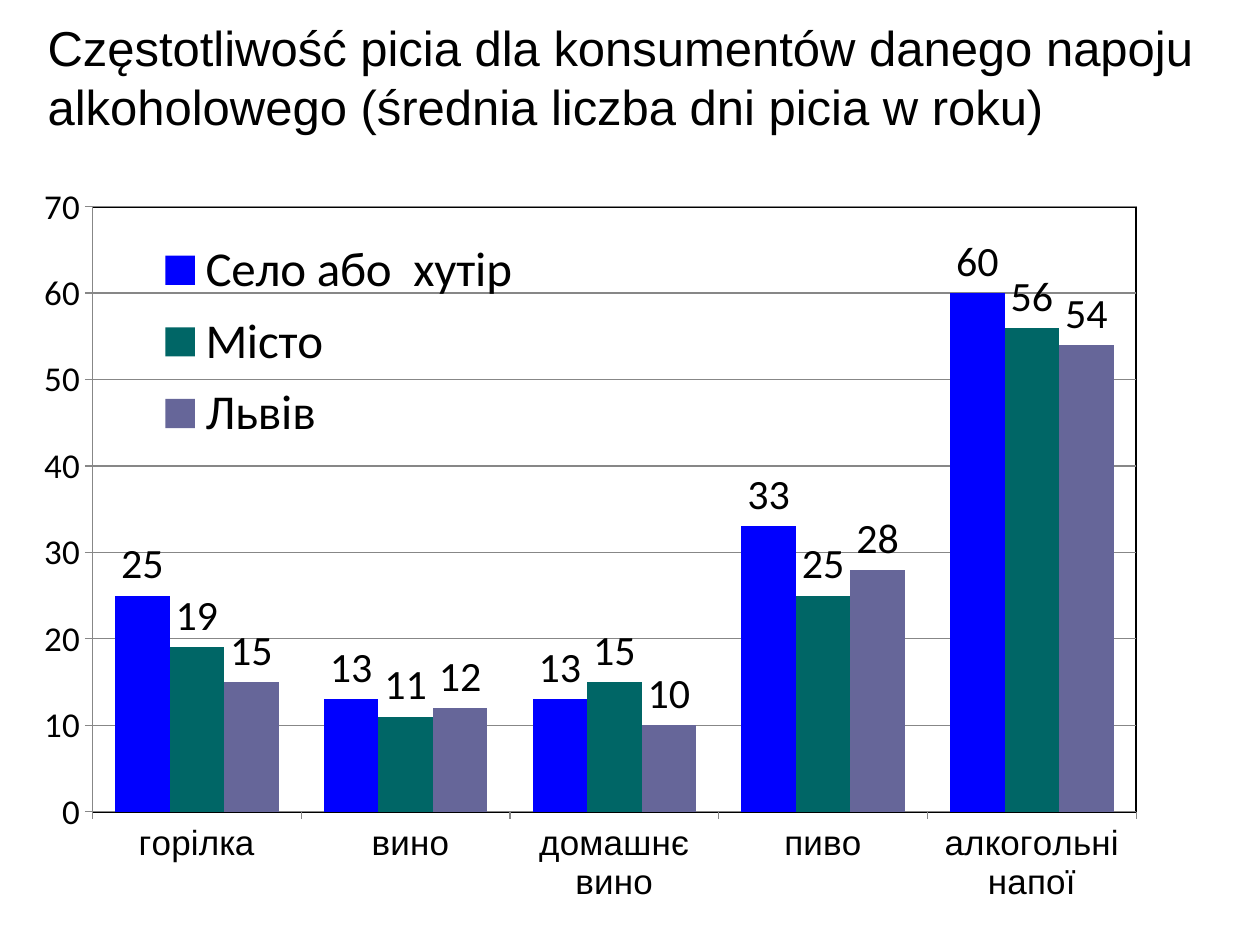
"""Build a slide with a clustered column chart of drinking frequency."""
from lxml import etree
from pptx import Presentation, util as u
from pptx.chart.data import CategoryChartData
from pptx.dml.color import RGBColor
from pptx.enum import chart as ch, text
from pptx.oxml import parse_xml
from pptx.oxml.ns import nsdecls, qn

TITLE = ("Częstotliwość picia dla konsumentów danego napoju "
         "alkoholowego (średnia liczba dni picia w roku)")
DRINKS = ["горілка", " вино", "домашнє вино", "пиво", "алкогольні напої"]
PLACES = [
    ("Село або  хутір", "village", (25, 13, 13, 33, 60)),
    ("Місто", "town", (19, 11, 15, 25, 56)),
    ("Львів", "city", (15, 12, 10, 28, 54)),
]
COLORS = {"village": "0000FF", "town": "006666", "city": "666699",
          "text": "000000", "grid": "878787"}
TITLE_BOX = (20.16, 4.32, 708.48, 79.2)
CHART_BOX = (25.2, 105.84, 671.04, 409.68)
PLOT_AREA = (0.04, 0.03, 0.89, 0.85)
LEGEND_AREA = (0.08, 0.06, 0.34, 0.32)


def color(name):
    return RGBColor.from_string(COLORS[name])


def points(values):
    return [u.Pt(value) for value in values]


def style_font(font, size, face="Calibri"):
    font.size, font.name, font.bold = u.Pt(size), face, False
    font.color.rgb = color("text")


def manual_layout(area, inner=False):
    layout = parse_xml(f"<c:layout {nsdecls('c')}><c:manualLayout/></c:layout>")
    settings = [("layoutTarget", "inner")] if inner else []
    settings += [("xMode", "edge"), ("yMode", "edge"), *zip("xywh", area)]
    for tag, value in settings:
        etree.SubElement(layout[0], qn(f"c:{tag}")).set("val", str(value))
    return layout


def add_title(page):
    box = page.shapes.add_textbox(*points(TITLE_BOX))
    frame = box.text_frame
    frame.word_wrap = True
    frame.vertical_anchor = text.MSO_ANCHOR.MIDDLE
    span = frame.paragraphs[0].add_run()
    span.text = TITLE
    style_font(span.font, 28, "Arial")


def style_axes(chart):
    for axis, face in ((chart.category_axis, "Arial"), (chart.value_axis, "Calibri")):
        style_font(axis.tick_labels.font, 20, face)
        axis.major_tick_mark = ch.XL_TICK_MARK.OUTSIDE
        axis.format.line.color.rgb = color("grid")
    values = chart.value_axis
    values.minimum_scale, values.maximum_scale, values.major_unit = 0, 70, 10
    values.major_gridlines.format.line.color.rgb = color("grid")


def style_columns(plot):
    plot.gap_width, plot.overlap = 83, 0
    plot.vary_by_categories = False
    for series, (_, key, _) in zip(plot.series, PLACES):
        series.format.fill.solid()
        series.format.fill.fore_color.rgb = color(key)
        labels = series.data_labels
        labels.show_value = True
        labels.position = ch.XL_LABEL_POSITION.OUTSIDE_END
        style_font(labels.font, 24)


def place_parts(chart):
    chart.has_legend = True
    legend = chart.legend
    legend.position = ch.XL_LEGEND_POSITION.TOP
    legend.include_in_layout = False
    style_font(legend.font, 28)
    root = chart.element
    for old in root.findall(".//" + qn("c:layout")):
        old.getparent().remove(old)
    root.find(".//" + qn("c:legendPos")).addnext(manual_layout(LEGEND_AREA))
    area = root.find(".//" + qn("c:plotArea"))
    area.insert(0, manual_layout(PLOT_AREA, inner=True))
    area.append(parse_xml(
        f"<c:spPr {nsdecls('c', 'a')}><a:noFill/><a:ln w='12700'><a:solidFill>"
        f"<a:srgbClr val='{COLORS['text']}'/></a:solidFill></a:ln></c:spPr>"))


def add_chart(page):
    data = CategoryChartData(number_format="0")
    data.categories = DRINKS
    for name, _, days in PLACES:
        data.add_series(name, days)
    chart = page.shapes.add_chart(
        ch.XL_CHART_TYPE.COLUMN_CLUSTERED, *points(CHART_BOX), data).chart
    chart.has_title = False
    style_font(chart.font, 18)
    style_axes(chart)
    style_columns(chart.plots[0])
    place_parts(chart)


def main():
    deck = Presentation()
    deck.slide_width, deck.slide_height = points((720, 540))
    page = deck.slides.add_slide(deck.slide_layouts[6])
    add_title(page)
    add_chart(page)
    deck.save("out.pptx")


if __name__ == "__main__":
    main()
